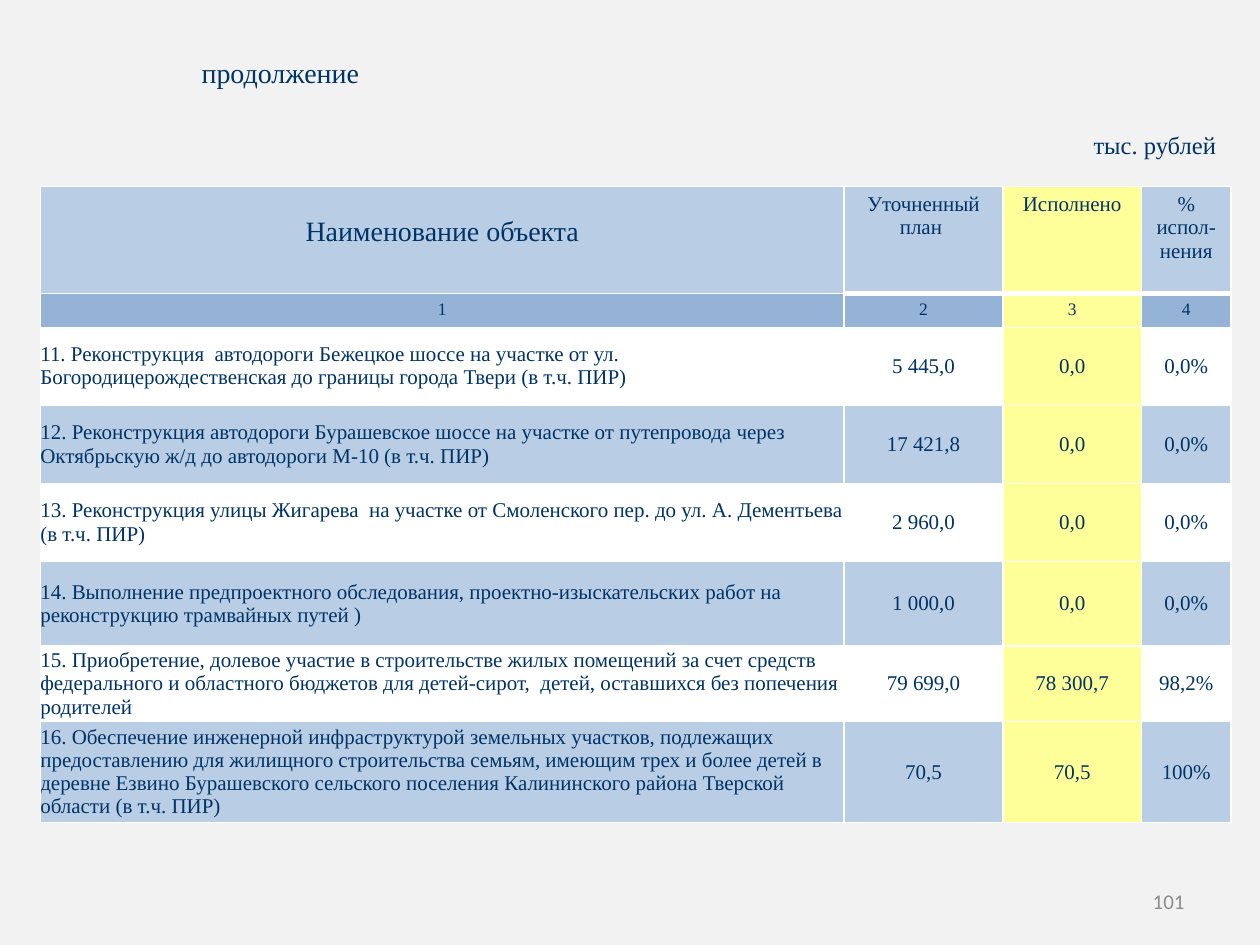
import pptx
import pptx.util
import pptx.dml.color
import pptx.enum.text
import pptx.oxml
import pptx.oxml.ns

Inches = pptx.util.Inches
ALIGN = pptx.enum.text.PP_ALIGN
ANCHOR = pptx.enum.text.MSO_ANCHOR
NAVY, WHITE, PALE, BLUE, YELLOW = "003366", "FFFFFF", "B9CDE5", "95B3D7", "FFFF99"


def tint(text):
    return pptx.dml.color.RGBColor.from_string(text)


def write(frame, text, size, align, color=NAVY, face="Times New Roman"):
    frame.word_wrap = True
    para = frame.paragraphs[0]
    para.alignment = align
    run = para.add_run()
    run.text = text
    for key, value in {"size": pptx.util.Pt(size), "name": face, "bold": False}.items():
        setattr(run.font, key, value)
    run.font.color.rgb = tint(color)


deck = pptx.Presentation()
deck.slide_width, deck.slide_height = Inches(10), Inches(7.5)
slide = deck.slides.add_slide(deck.slide_layouts[5])
slide.background.fill.solid()
slide.background.fill.fore_color.rgb = tint("F2F2F2")

# Title
title = slide.shapes.title
place = {"left": 0.75, "top": 0.29, "width": 2.2, "height": 0.47}
for key, value in place.items():
    setattr(title, key, Inches(value))
title.text_frame.vertical_anchor = ANCHOR.BOTTOM
write(title.text_frame, "продолжение", 16, ALIGN.RIGHT)

# Page number
page = slide.shapes.add_textbox(Inches(7.17), Inches(6.95), Inches(2.33), Inches(0.4))
page.text_frame.vertical_anchor = ANCHOR.MIDDLE
write(page.text_frame, "101", 12, ALIGN.RIGHT, "8C8C8C", "Calibri")

# Table of objects
rows = [
    ("Наименование объекта", "Уточненный план ", "Исполнено", "% испол-нения"),
    ("1", "2", "3", "4"),
    ("11. Реконструкция  автодороги Бежецкое шоссе на участке от ул. "
     "Богородицерождественская до границы города Твери (в т.ч. ПИР)",
     "5 445,0", "0,0", "0,0%"),
    ("12. Реконструкция автодороги Бурашевское шоссе на участке от путепровода через "
     "Октябрьскую ж/д до автодороги М-10 (в т.ч. ПИР)",
     "17 421,8", "0,0", "0,0%"),
    ("13. Реконструкция улицы Жигарева  на участке от Смоленского пер. до "
     "ул. А. Дементьева (в т.ч. ПИР)",
     "2 960,0", "0,0", "0,0%"),
    ("14. Выполнение предпроектного обследования, проектно-изыскательских работ на "
     "реконструкцию трамвайных путей )",
     "1 000,0", "0,0", "0,0%"),
    ("15. Приобретение, долевое участие в строительстве жилых помещений за счет средств "
     "федерального и областного бюджетов для детей-сирот,  детей, оставшихся без "
     "попечения родителей",
     "79 699,0", "78 300,7", "98,2%"),
    ("16. Обеспечение инженерной инфраструктурой земельных участков, подлежащих "
     "предоставлению для жилищного строительства семьям, имеющим трех и более детей в "
     "деревне Езвино Бурашевского сельского поселения Калининского района Тверской "
     "области (в т.ч. ПИР)",
     "70,5", "70,5", "100%"),
]
widths = [6.38, 1.26, 1.1, 0.71]
heights = [0.85, 0.23, 0.62, 0.62, 0.62, 0.67, 0.52, 0.51]
table = slide.shapes.add_table(len(rows), len(widths), Inches(0.32), Inches(1.48),
                               Inches(sum(widths)), Inches(sum(heights))).table
table.first_row = table.horz_banding = False
for col, width in zip(table.columns, widths):
    col.width = Inches(width)
for row, height in zip(table.rows, heights):
    row.height = Inches(height)

for r, texts in enumerate(rows):
    shade = [PALE, BLUE][r] if r < 2 else [WHITE, PALE][r % 2]
    for c, text in enumerate(texts):
        cell = table.cell(r, c)
        align, size = ALIGN.CENTER, 10 if r == 1 else 12
        if r > 1:
            cell.vertical_anchor = ANCHOR.MIDDLE
            if c == 0:
                align = ALIGN.LEFT
                for side in ("left", "right", "top", "bottom"):
                    setattr(cell, "margin_" + side, 0)
        elif r == c == 0:
            size = 16
            cell.margin_top = Inches(0.24)
        write(cell.text_frame, text, size, align)

        # White borders go before the fill
        for side in "LRTB":
            thick = 3 if side == "B" and r == 0 and c > 0 else 1
            cell._tc.get_or_add_tcPr().append(pptx.oxml.parse_xml(
                f'<a:ln{side} {pptx.oxml.ns.nsdecls("a")} w="{pptx.util.Pt(thick)}">'
                f'<a:solidFill><a:srgbClr val="{WHITE}"/></a:solidFill></a:ln{side}>'))
        cell.fill.solid()
        cell.fill.fore_color.rgb = tint(YELLOW if c == 2 else shade)

# Unit of measure
unit = slide.shapes.add_textbox(Inches(8.18), Inches(0.98), Inches(1.57), Inches(0.34))
write(unit.text_frame, "тыс. рублей", 14, ALIGN.RIGHT)

deck.save("out.pptx")
